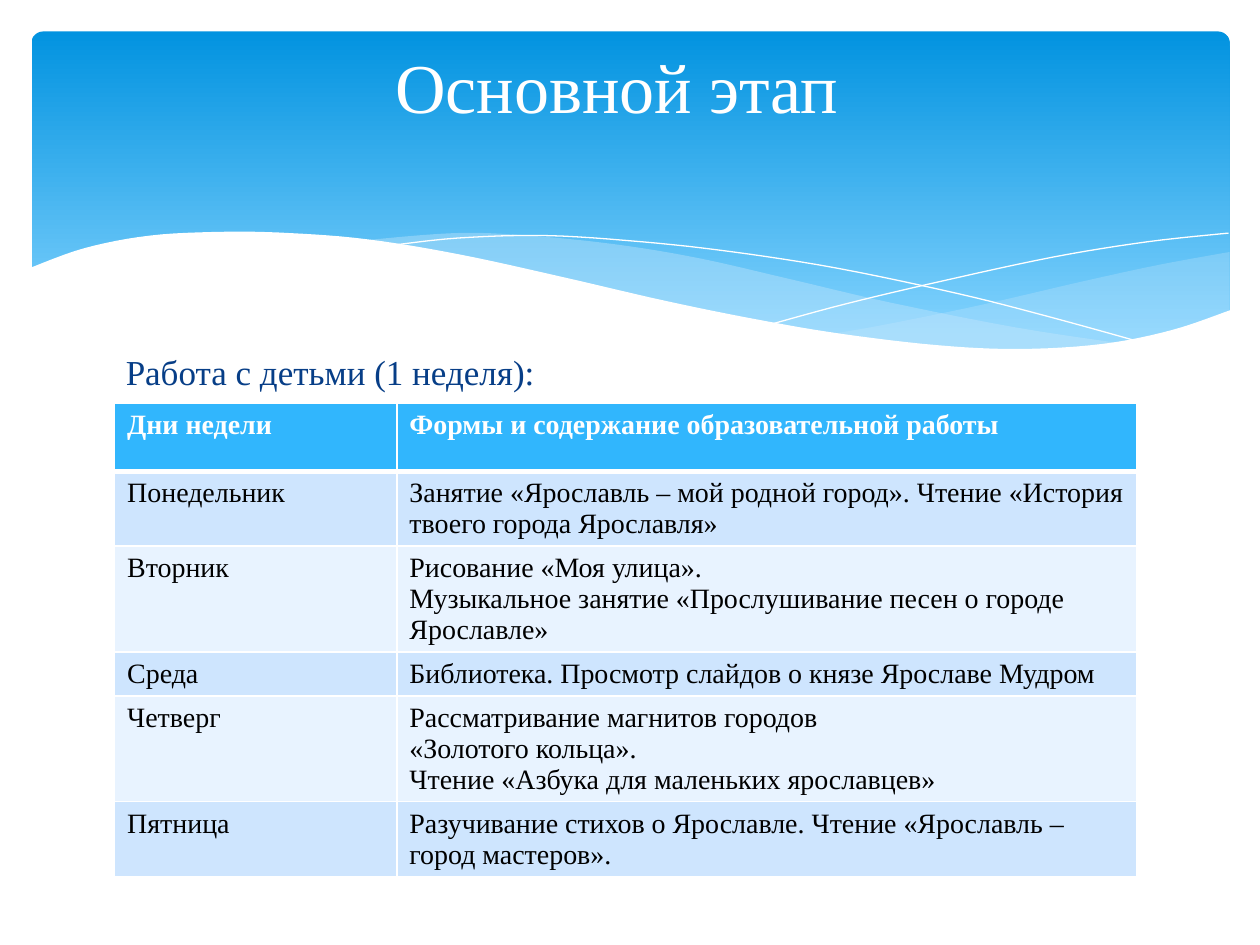
from lxml import etree
from pptx import Presentation
from pptx.dml.color import RGBColor
from pptx.enum import shapes, text
from pptx.oxml import ns
from pptx.util import Inches, Pt

FONT = "Times New Roman"
WHITE, NAVY, PALE = "FFFFFF", "073E87", "C6E7FC"
HEADER_FILL, BAND_FILLS = "31B6FD", ("CEE5FE", "E8F3FF")

TITLE = "Основной этап "
SUBTITLE = "Работа с детьми (1 неделя):"
ROWS = [
    ("Дни недели", "Формы и содержание образовательной работы"),
    ("Понедельник", "Занятие «Ярославль – мой родной город». Чтение «История твоего города Ярославля»"),
    ("Вторник", "Рисование «Моя улица».\nМузыкальное занятие «Прослушивание песен о городе Ярославле»"),
    ("Среда", "Библиотека. Просмотр слайдов о князе Ярославе Мудром"),
    ("Четверг", "Рассматривание магнитов городов\n«Золотого кольца».\nЧтение «Азбука для маленьких ярославцев»"),
    ("Пятница", "Разучивание стихов о Ярославле. Чтение «Ярославль – город мастеров»."),
]
COLUMN_WIDTHS = (2.24, 5.87)
ROW_HEIGHTS = (0.54, 0.59, 0.84, 0.34, 0.84, 0.59)

# Each wave is a list of edges; the points of an edge are joined by a smooth curve.
RIGHT_WAVE = [
    [(9.76, 2), (9.21, 2.1), (8.61, 2.23), (7.79, 2.42), (7.06, 2.57), (6.61, 2.65)],
    [(6.61, 2.65), (7.19, 2.72), (7.69, 2.77), (8.14, 2.78), (8.63, 2.75), (9.13, 2.67),
     (9.49, 2.57), (9.76, 2.47)],
]
LEFT_WAVE = [
    [(8.93, 2.73), (8.07, 2.6), (7.06, 2.4), (6.29, 2.22), (5.55, 2.05), (4.89, 1.94),
     (4.2, 1.87), (3.61, 1.85), (2.86, 1.91)],
    [(2.86, 1.91), (3.62, 2.03), (4.49, 2.22), (5.3, 2.4), (6.01, 2.55), (6.8, 2.68),
     (7.48, 2.76), (8.18, 2.78), (8.93, 2.73)],
]
FALLING_LINE = [[(3.09, 1.95), (3.63, 1.89), (4.33, 1.87), (5.1, 1.92), (5.82, 2), (6.65, 2.13),
                 (7.6, 2.33), (8.31, 2.51), (9.07, 2.72)]]
RISING_LINE = [[(6.13, 2.57), (6.72, 2.41), (7.48, 2.23), (8.36, 2.04), (9.1, 1.92), (9.75, 1.85)]]
WHITE_WAVE = [
    [(9.77, 2.46), (9.3, 2.62), (8.75, 2.73), (8.09, 2.77), (7.44, 2.74), (6.68, 2.65),
     (6.03, 2.54), (5.29, 2.39), (4.47, 2.2), (3.65, 2.02), (2.92, 1.9), (2.3, 1.85),
     (1.77, 1.84), (1.19, 1.87), (0.67, 1.97), (0.23, 2.13)],
    [(0.23, 3.29), (9.77, 3.29)],
]


def color(value):
    return RGBColor.from_string(value)


def style_font(paragraph, size, value, bold=False):
    font = paragraph.font
    font.name, font.size, font.bold = FONT, Pt(size), bold
    font.color.rgb = color(value)


def smooth(points, steps=6):
    """Return points along a Catmull-Rom curve through the given points."""
    padded = [points[0], *points, points[-1]]
    curve = [points[0]]
    for a, b, c, d in zip(padded, padded[1:], padded[2:], padded[3:]):
        for step in range(1, steps + 1):
            t = step / steps
            curve.append(tuple(
                (2 * q + (r - p) * t + (2 * p - 5 * q + 4 * r - s) * t ** 2
                 + (3 * q - p - 3 * r + s) * t ** 3) / 2
                for p, q, r, s in zip(a, b, c, d)))
    return curve


def add_wave(slide, edges, fill=None, opacity=100):
    """Draw a filled wave, or a white hairline when no fill is given."""
    points = [(Inches(x), Inches(y)) for edge in edges for x, y in smooth(edge)]
    builder = slide.shapes.build_freeform(*points[0])
    builder.add_line_segments(points[1:], close=fill is not None)
    shape = builder.convert_to_shape()
    shape.shadow.inherit = False
    if fill is None:
        shape.fill.background()
        shape.line.color.rgb = color(WHITE)
        shape.line.width = Pt(0)
        return
    shape.fill.solid()
    shape.fill.fore_color.rgb = color(fill)
    shape.line.fill.background()
    if opacity < 100:
        fill_color = shape._element.spPr.find(ns.qn("a:solidFill"))[0]
        etree.SubElement(fill_color, ns.qn("a:alpha"), val=str(opacity * 1000))


def add_banner(slide):
    banner = slide.shapes.add_shape(shapes.MSO_SHAPE.ROUNDED_RECTANGLE,
                                    Inches(0.25), Inches(0.25), Inches(9.51), Inches(2.7))
    banner.adjustments[0] = 0.034
    banner.shadow.inherit = False
    banner.line.fill.background()
    banner.fill.gradient()
    banner.fill.gradient_angle = 270
    for stop, (position, value) in zip(banner.fill.gradient_stops, [(0, "0293E0"), (0.9, "83D3FE")]):
        stop.position = position
        stop.color.rgb = color(value)
    add_wave(slide, RIGHT_WAVE, PALE, 29)
    add_wave(slide, LEFT_WAVE, PALE, 40)
    add_wave(slide, FALLING_LINE)
    add_wave(slide, RISING_LINE)
    add_wave(slide, WHITE_WAVE, WHITE)


def add_subtitle(slide):
    box = slide.shapes.add_textbox(Inches(0.83), Inches(2.73), Inches(8.5), Inches(5.98))
    box.text_frame.word_wrap = True
    paragraph = box.text_frame.paragraphs[0]
    paragraph.text = SUBTITLE
    paragraph.space_before = Pt(4)
    paragraph._p.get_or_add_pPr().set("marL", str(Inches(0.07)))
    style_font(paragraph, 20, NAVY)


def format_title(slide):
    title = slide.shapes.title
    title.left, title.top, title.width, title.height = map(Inches, (2.72, 0.44, 4.49, 0.47))
    frame = title.text_frame
    frame.text = TITLE
    frame.auto_size = text.MSO_AUTO_SIZE.NONE
    frame.vertical_anchor = text.MSO_ANCHOR.MIDDLE
    frame.paragraphs[0].alignment = text.PP_ALIGN.CENTER
    style_font(frame.paragraphs[0], 40, WHITE)
    slide.shapes._spTree.append(title._element)  # in front of the banner


def set_borders(cell, bottom_width):
    properties = cell._tc.get_or_add_tcPr()
    widths = {"lnL": 1, "lnR": 1, "lnT": 1, "lnB": bottom_width}
    for index, (side, width) in enumerate(widths.items()):
        line = etree.Element(ns.qn(f"a:{side}"), w=str(Pt(width)))
        fill = etree.SubElement(line, ns.qn("a:solidFill"))
        etree.SubElement(fill, ns.qn("a:srgbClr"), val=WHITE)
        properties.insert(index, line)


def add_schedule(slide):
    table = slide.shapes.add_table(
        len(ROWS), len(COLUMN_WIDTHS), Inches(0.91), Inches(3.2),
        Inches(sum(COLUMN_WIDTHS)), Inches(sum(ROW_HEIGHTS))).table
    for column, width in zip(table.columns, COLUMN_WIDTHS):
        column.width = Inches(width)
    for row_index, (row, height, values) in enumerate(zip(table.rows, ROW_HEIGHTS, ROWS)):
        row.height = Inches(height)
        header = row_index == 0
        for cell, value in zip(row.cells, values):
            cell.text = value
            cell.fill.solid()
            cell.fill.fore_color.rgb = color(HEADER_FILL if header else BAND_FILLS[(row_index - 1) % 2])
            set_borders(cell, 3 if header else 1)
            for paragraph in cell.text_frame.paragraphs:
                style_font(paragraph, 16, WHITE if header else "000000", header)


def main():
    presentation = Presentation()
    presentation.slide_width, presentation.slide_height = Inches(10), Inches(7.5)
    slide = presentation.slides.add_slide(presentation.slide_layouts[5])
    add_banner(slide)
    add_subtitle(slide)
    format_title(slide)
    add_schedule(slide)
    presentation.save("out.pptx")


if __name__ == "__main__":
    main()
